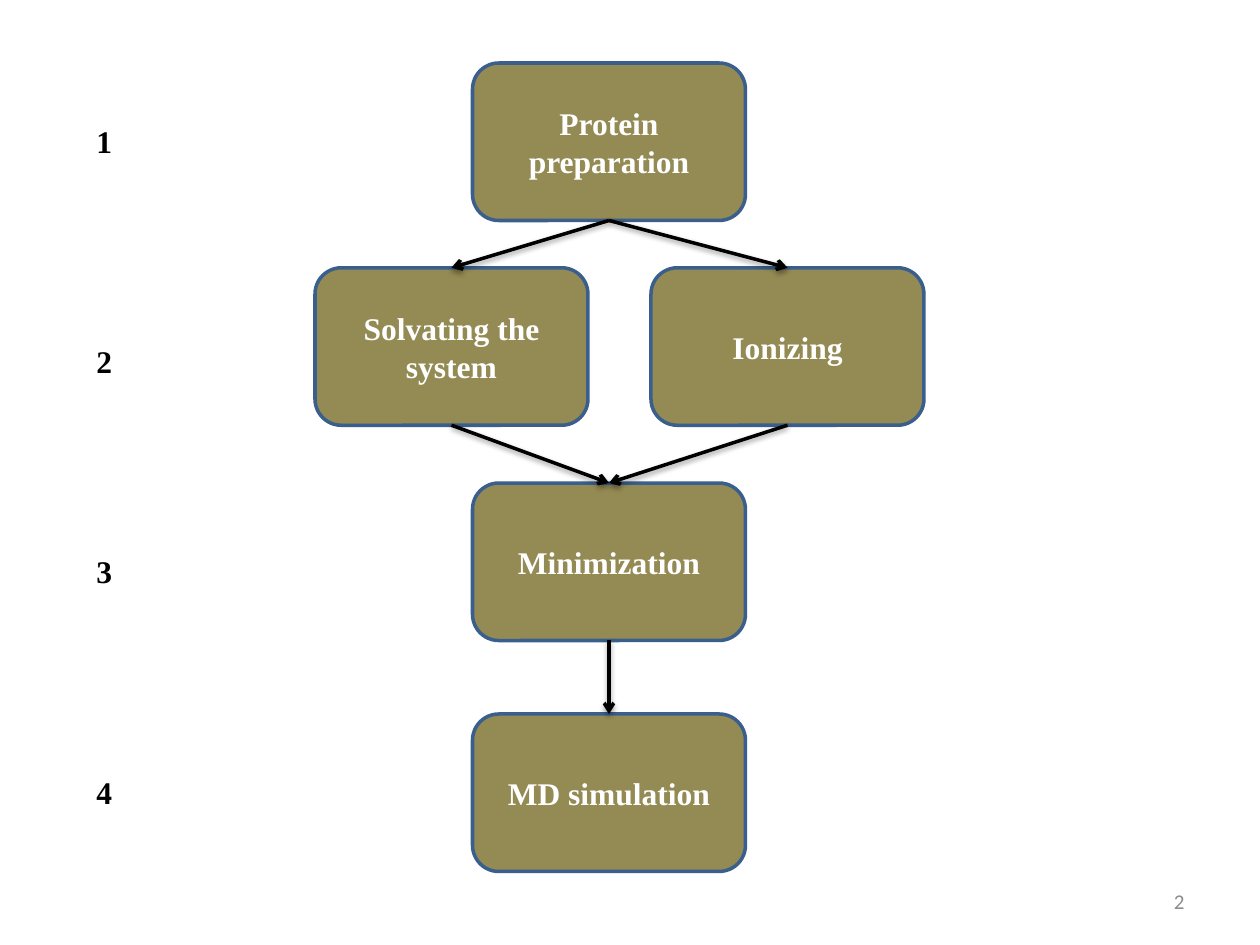
from lxml.etree import SubElement
from pptx import Presentation
from pptx.dml.color import RGBColor
from pptx.enum.shapes import MSO_CONNECTOR, MSO_SHAPE
from pptx.enum.text import MSO_ANCHOR, PP_ALIGN
from pptx.oxml import parse_xml
from pptx.oxml.ns import qn
from pptx.util import Inches, Pt


def color(hex_text):
    return RGBColor.from_string(hex_text)


def write(shape, text, size, font_name, hex_text, bold, alignment, anchor):
    text_frame = shape.text_frame
    text_frame.text = text
    text_frame.word_wrap = True
    text_frame.vertical_anchor = anchor
    paragraph = text_frame.paragraphs[0]
    paragraph.alignment = alignment
    font = paragraph.runs[0].font
    font.size = Pt(size)
    font.name = font_name
    font.bold = bold
    font.color.rgb = color(hex_text)


presentation = Presentation()
presentation.slide_width = Inches(10)
presentation.slide_height = Inches(7.5)
slide = presentation.slides.add_slide(presentation.slide_layouts[6])
column = presentation.slide_width // 120
row = presentation.slide_height // 90
serif = "Times New Roman"

steps = [
    ("Protein preparation", 45, 6),
    ("Solvating the system", 30, 25.5),
    ("Ionizing", 62, 25.5),
    ("Minimization", 45, 46),
    ("MD simulation", 45, 68),
]
boxes = {}
for name, left, top in steps:
    box = slide.shapes.add_shape(
        MSO_SHAPE.ROUNDED_RECTANGLE,
        int(left * column), int(top * row), 26 * column, 15 * row,
    )
    box.shadow.inherit = False
    box.fill.solid()
    box.fill.fore_color.rgb = color("948A54")
    box.line.color.rgb = color("3A5F8C")
    box.line.width = Pt(2)
    write(box, name, 18, serif, "FFFFFF", True, PP_ALIGN.CENTER, MSO_ANCHOR.MIDDLE)
    boxes[name] = box

arrows = [
    ("Protein preparation", "Solvating the system"),
    ("Protein preparation", "Ionizing"),
    ("Solvating the system", "Minimization"),
    ("Ionizing", "Minimization"),
    ("Minimization", "MD simulation"),
]
shadow_xml = (
    '<a:effectLst xmlns:a="http://schemas.openxmlformats.org/drawingml/2006/main">'
    '<a:outerShdw blurRad="40000" dist="20000" dir="5400000" rotWithShape="0">'
    '<a:srgbClr val="000000"><a:alpha val="38000"/></a:srgbClr>'
    "</a:outerShdw></a:effectLst>"
)
for source, target in arrows:
    arrow = slide.shapes.add_connector(MSO_CONNECTOR.STRAIGHT, 0, 0, 0, 0)
    arrow.begin_connect(boxes[source], 2)
    arrow.end_connect(boxes[target], 0)
    arrow.line.color.rgb = color("000000")
    arrow.line.width = Pt(2)
    SubElement(arrow.line._get_or_add_ln(), qn("a:tailEnd"), type="arrow")
    arrow._element.spPr.append(parse_xml(shadow_xml))

for number, top in enumerate((11, 32, 52, 73), start=1):
    label = slide.shapes.add_textbox(8 * column, top * row, int(5.5 * column), 5 * row)
    write(label, str(number), 18, serif, "000000", True, PP_ALIGN.LEFT, MSO_ANCHOR.TOP)

page_number = slide.shapes.add_textbox(
    86 * column, int(83.4 * row), 28 * column, int(4.8 * row)
)
write(page_number, "2", 12, "Calibri", "8C8C8C", False, PP_ALIGN.RIGHT, MSO_ANCHOR.MIDDLE)

presentation.save("out.pptx")
